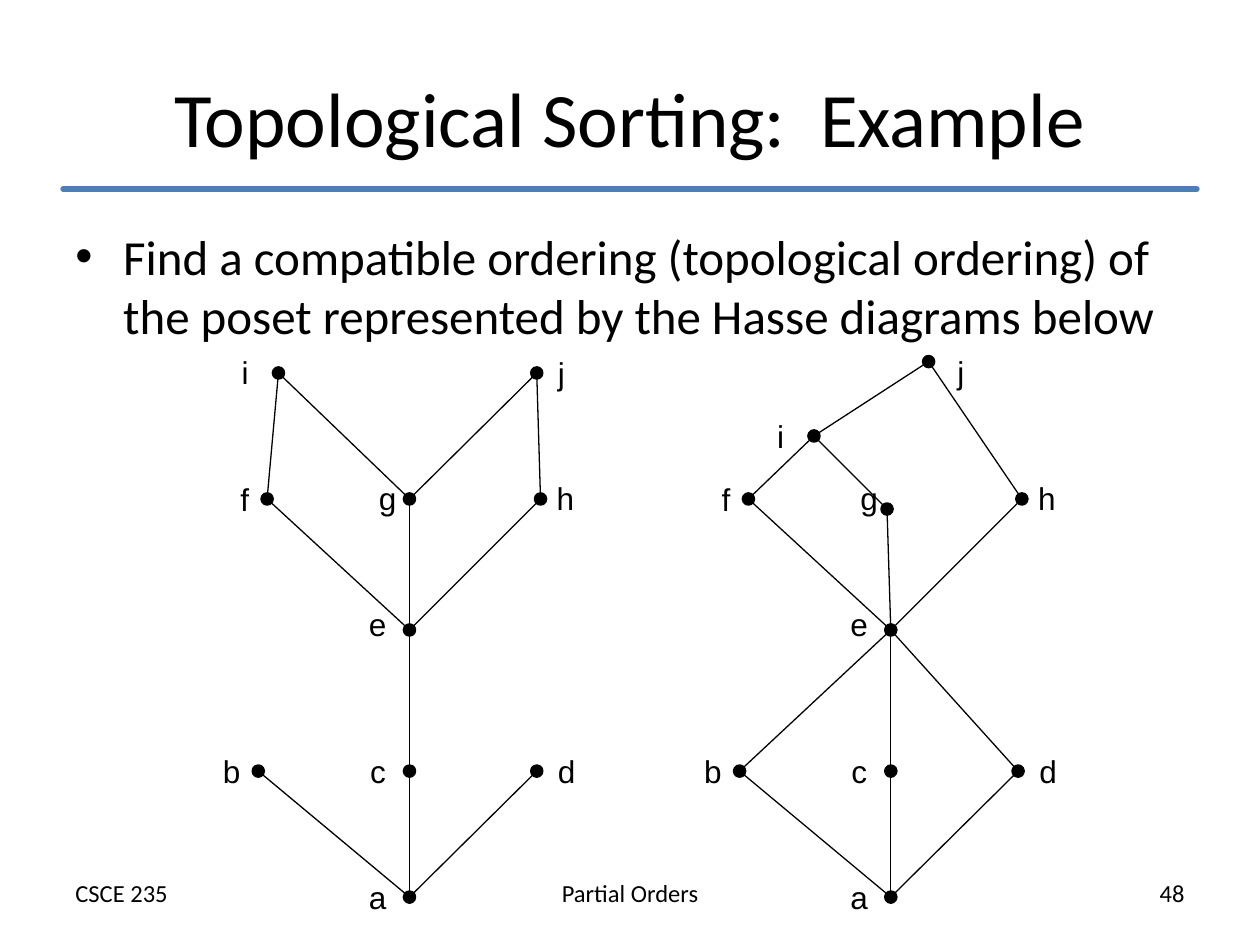
from lxml.etree import SubElement
from pptx import Presentation
from pptx.dml.color import RGBColor
from pptx.enum.shapes import MSO_CONNECTOR, MSO_SHAPE
from pptx.enum.text import MSO_ANCHOR, MSO_AUTO_SIZE, PP_ALIGN
from pptx.oxml.ns import qn
from pptx.util import Emu, Pt

PX = 9144  # 100 px to the inch
BLACK, BLUE = "000000", "4B7EBC"
DOT = 8
LABEL_HEIGHT = 40
NARROW_LABELS = "fij"

# node: (dot centre x, y, label left, top), relative to the diagram's box
SHARED_NODES = {
    "a": (158, 437, 116, 417),
    "b": (38, 337, 0, 317),
    "c": (158, 337, 117, 317),
    "d": (259, 337, 266, 317),
    "e": (158, 225, 116, 200),
    "f": (45, 121, 14, 101),
    "h": (262, 121, 265, 100),
}
LEFT_NODES = SHARED_NODES | {
    "g": (158, 121, 124, 100),
    "i": (54, 21, 15, 0),
    "j": (259, 21, 266, 1),
}
RIGHT_NODES = SHARED_NODES | {
    "g": (155, 129, 124, 100),
    "i": (97, 71, 58, 51),
    "j": (188, 12, 201, 0),
}
SHARED_EDGES = ["ab", "ac", "ad", "ce", "ef", "eg", "eh", "fi", "gi", "hj"]
LEFT_EDGES = SHARED_EDGES + ["gj"]
RIGHT_EDGES = SHARED_EDGES + ["be", "de", "ij"]


def px(*lengths):
    return [Emu(length * PX) for length in lengths]


def color(hex_string):
    return RGBColor.from_string(hex_string)


def write(paragraph, text, size, font="Calibri", align=PP_ALIGN.LEFT):
    paragraph.alignment = align
    run = paragraph.add_run()
    run.text = text
    run.font.size = Pt(size)
    run.font.name = font
    run.font.color.rgb = color(BLACK)


def add_text(slide, box, text, size, wrap=True, **style):
    frame = slide.shapes.add_textbox(*px(*box)).text_frame
    frame.word_wrap = wrap
    frame.auto_size = MSO_AUTO_SIZE.SHAPE_TO_FIT_TEXT
    paragraph = frame.paragraphs[0]
    write(paragraph, text, size, **style)
    return paragraph


def add_line(slide, start, end, hex_string, width):
    line = slide.shapes.add_connector(MSO_CONNECTOR.STRAIGHT, *px(*start, *end))
    line.line.color.rgb = color(hex_string)
    line.line.width = Pt(width)
    SubElement(line._element.spPr, qn("a:effectLst"))
    return line


def add_heading(slide, box, text):
    left, top, width, height = box
    title = slide.shapes.title
    title.left, title.top, title.width, title.height = px(*box)
    title.text_frame.vertical_anchor = MSO_ANCHOR.MIDDLE
    write(title.text_frame.paragraphs[0], text, 44, align=PP_ALIGN.CENTER)
    rule_y = top + height - 5
    rule = add_line(slide, (left, rule_y), (left + width, rule_y), BLUE, 3)
    rule.line._get_or_add_ln().set("cap", "rnd")


def add_bullet(slide, box, text):
    paragraph = add_text(slide, box, text, 28)
    paragraph.space_before = Pt(6)
    properties = paragraph._p.get_or_add_pPr()
    indent = 38 * PX
    properties.set("marL", str(indent))
    properties.set("indent", str(-indent))
    SubElement(properties, qn("a:buFont"), typeface="Arial")
    SubElement(properties, qn("a:buChar"), char="•")


def add_footer(slide, box, entries):
    """Spread the entries over equal columns: left, centre and right."""
    left, top, width, height = box
    column = 292
    step = (width - column) // 2
    aligns = (PP_ALIGN.LEFT, PP_ALIGN.CENTER, PP_ALIGN.RIGHT)
    for index, (entry, align) in enumerate(zip(entries, aligns)):
        add_text(slide, (left + index * step, top, column, height), entry, 14, align=align)


def add_hasse_diagram(slide, left, top, nodes, edges):
    def centre(name):
        x, y = nodes[name][:2]
        return left + x, top + y

    for lower, upper in edges:
        add_line(slide, centre(lower), centre(upper), BLACK, 0.75)

    for name, (x, y, label_x, label_y) in nodes.items():
        dot = slide.shapes.add_shape(
            MSO_SHAPE.OVAL, *px(left + x - DOT // 2, top + y - DOT // 2, DOT, DOT))
        dot.shadow.inherit = False
        dot.fill.solid()
        dot.fill.fore_color.rgb = color(BLACK)
        dot.line.color.rgb = color(BLACK)
        dot.line.width = Pt(2)
        label_width = 26 if name in NARROW_LABELS else 34
        add_text(slide, (left + label_x, top + label_y, label_width, LABEL_HEIGHT),
                 name, 18, wrap=False, font="Arial")


def main():
    deck = Presentation()
    deck.slide_width, deck.slide_height = px(1000, 750)
    slide = deck.slides.add_slide(deck.slide_layouts.get_by_name("Title Only"))

    add_footer(slide, (50, 692, 900, 34), ("CSCE 235", "Partial Orders", "48"))
    add_heading(slide, (50, 30, 900, 125), "Topological Sorting:  Example")
    add_bullet(slide, (50, 175, 900, 100),
               "Find a compatible ordering (topological ordering) of "
               "the poset represented by the Hasse diagrams below")
    add_hasse_diagram(slide, 167, 275, LEFT_NODES, LEFT_EDGES)
    add_hasse_diagram(slide, 549, 275, RIGHT_NODES, RIGHT_EDGES)

    deck.save("out.pptx")


if __name__ == "__main__":
    main()
